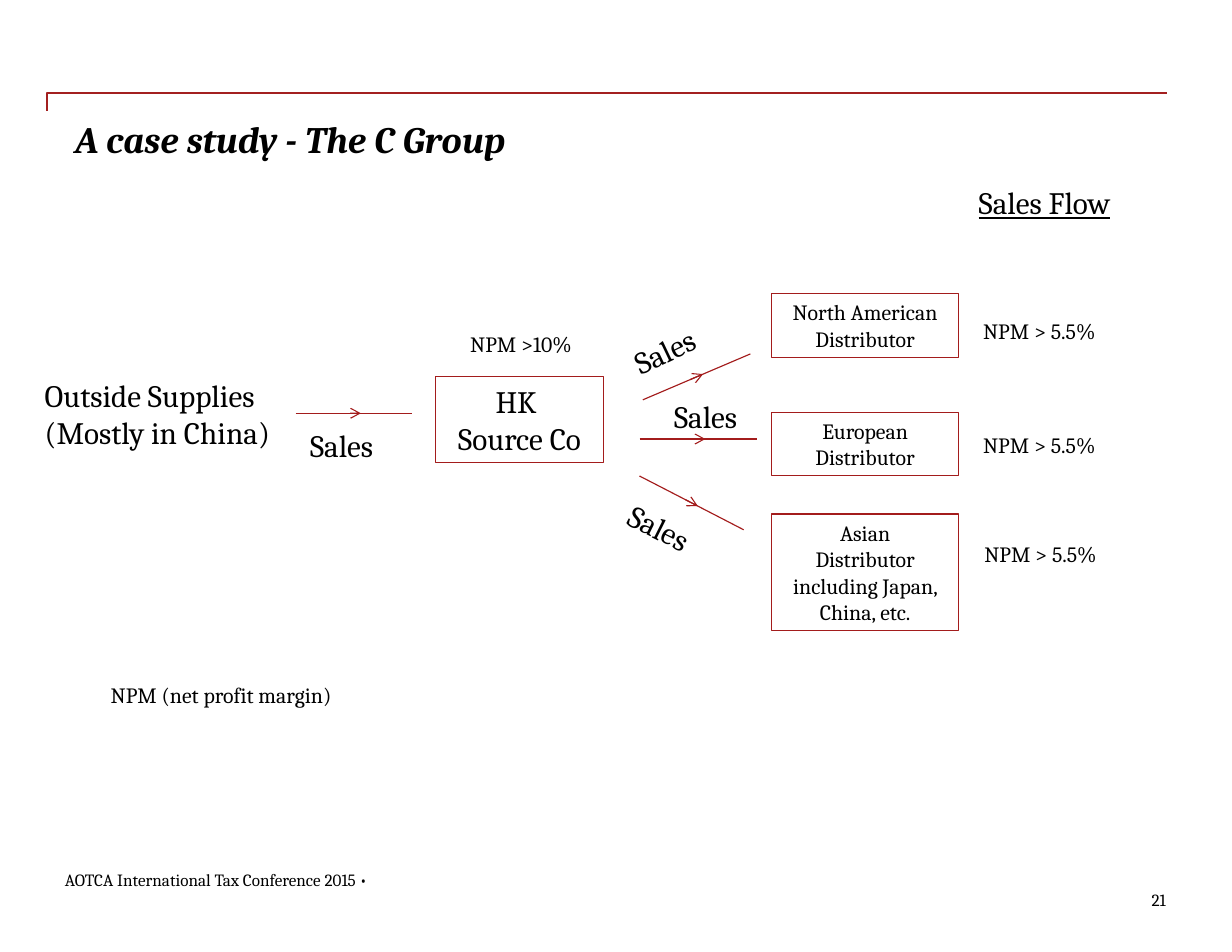
import dataclasses

import lxml.etree
import pptx
import pptx.dml.color
import pptx.enum.shapes
import pptx.enum.text
import pptx.oxml.ns
import pptx.util

EMU_PER_PX = 9144  # 100 px to the inch
ALIGN = pptx.enum.text.PP_ALIGN
CONNECTOR = pptx.enum.shapes.MSO_CONNECTOR


@dataclasses.dataclass(frozen=True)
class Theme:
    font: str = "Cambria"
    ink: str = "000000"
    rule: str = "A32020"
    line: str = "A31C1C"
    rule_width: float = 1
    line_width: float = 0.75
    title: int = 24
    large: int = 20
    small: int = 14
    footer: int = 11


THEME = Theme()


def px(value):
    return pptx.util.Emu(round(value * EMU_PER_PX))


def rgb(value):
    return pptx.dml.color.RGBColor.from_string(value)


def add_xml(parent, tag, **attributes):
    return lxml.etree.SubElement(parent, pptx.oxml.ns.qn(tag), **attributes)


def write(frame, text, size, align=ALIGN.LEFT):
    """Fill a text frame, one paragraph for each line of text."""
    for number, line in enumerate(text.split("\n")):
        para = frame.add_paragraph() if number else frame.paragraphs[0]
        para.text = line
        para.alignment = align
        para.font.name = THEME.font
        para.font.size = pptx.util.Pt(size)
        para.font.color.rgb = rgb(THEME.ink)


def add_label(slide, bounds, text, size, rotation=0, inset=True, wrap=False, align=ALIGN.LEFT):
    box = slide.shapes.add_textbox(*map(px, bounds))
    box.rotation = rotation
    frame = box.text_frame
    frame.word_wrap = wrap
    if not inset:
        frame.margin_left = frame.margin_right = 0
        frame.margin_top = frame.margin_bottom = 0
    write(frame, text, size, align)
    return box


def add_company(slide, bounds, text, size):
    box = slide.shapes.add_shape(pptx.enum.shapes.MSO_SHAPE.RECTANGLE, *map(px, bounds))
    box.shadow.inherit = False
    box.fill.background()
    box.line.color.rgb = rgb(THEME.line)
    box.line.width = pptx.util.Pt(THEME.line_width)
    box.text_frame.word_wrap = True
    write(box.text_frame, text, size, ALIGN.CENTER)


def add_line(slide, start, end, color, width, kind=CONNECTOR.STRAIGHT):
    line = slide.shapes.add_connector(kind, *map(px, (*start, *end)))
    line.line.color.rgb = rgb(color)
    line.line.width = pptx.util.Pt(width)
    add_xml(line._element.spPr, "a:effectLst")
    return line


def add_header_rule(slide):
    """Draw the page-wide rule with its short drop at the left end."""
    rule = add_line(slide, (42, 99), (1042, 83), THEME.rule, THEME.rule_width, CONNECTOR.ELBOW)
    geometry = rule._element.spPr.find(pptx.oxml.ns.qn("a:prstGeom"))
    for guides in list(geometry):
        geometry.remove(guides)
    add_xml(add_xml(geometry, "a:avLst"), "a:gd", name="adj1", fmla="val 0")


def add_flow(slide, start, end):
    """Draw a line with its arrowhead near the middle, as two overlapping halves."""
    def along(share):
        return [a + (b - a) * share for a, b in zip(start, end)]

    first = add_line(slide, start, along(0.56), THEME.line, THEME.line_width)
    add_xml(first.line._get_or_add_ln(), "a:tailEnd", type="arrow")
    add_line(slide, along(0.44), end, THEME.line, THEME.line_width)


def main():
    deck = pptx.Presentation()
    deck.slide_width, deck.slide_height = px(1100), px(850)
    slide = deck.slides.add_slide(deck.slide_layouts[6])

    add_header_rule(slide)
    title = add_label(slide, (67, 104, 889, 100), "A case study - The C Group",
                      THEME.title, inset=False, wrap=True)
    title.text_frame.paragraphs[0].font.bold = True
    title.text_frame.paragraphs[0].font.italic = True
    heading = add_label(slide, (864, 159, 151, 44), "Sales Flow", THEME.large)
    heading.text_frame.paragraphs[0].font.underline = True

    add_label(slide, (30, 331, 238, 77), "Outside Supplies\n(Mostly in China)", THEME.large)
    add_company(slide, (389, 336, 150, 77), "HK \nSource Co", THEME.large)
    add_label(slide, (410, 290, 119, 34), "NPM >10%", THEME.small)

    distributors = [
        (262, 57, "North American Distributor", (868, 279)),
        (368, 57, "European Distributor", (868, 381)),
        (459, 104, "Asian\nDistributor including Japan, China, etc.", (869, 478)),
    ]
    for top, height, name, margin_at in distributors:
        add_company(slide, (689, top, 167, height), name, THEME.small)
        add_label(slide, (*margin_at, 130, 34), "NPM > 5.5%", THEME.small)

    flows = [
        ((264, 369), (368, 369), (267, 376), 0),
        ((574, 357), (670, 316), (555, 290), 334.6),
        ((571, 392), (676, 392), (592, 350), 0),
        ((571, 425), (664, 473), (550, 451), 26.5),
    ]
    for start, end, label_at, rotation in flows:
        add_flow(slide, start, end)
        add_label(slide, (*label_at, 84, 44), "Sales", THEME.large, rotation)

    add_label(slide, (89, 604, 234, 34), "NPM (net profit margin)", THEME.small)
    add_label(slide, (58, 776, 309, 19), "AOTCA International Tax Conference 2015 •",
              THEME.footer, inset=False)
    add_label(slide, (1026, 794, 15, 19), "21", THEME.footer, inset=False, align=ALIGN.RIGHT)
    deck.save("out.pptx")


if __name__ == "__main__":
    main()
